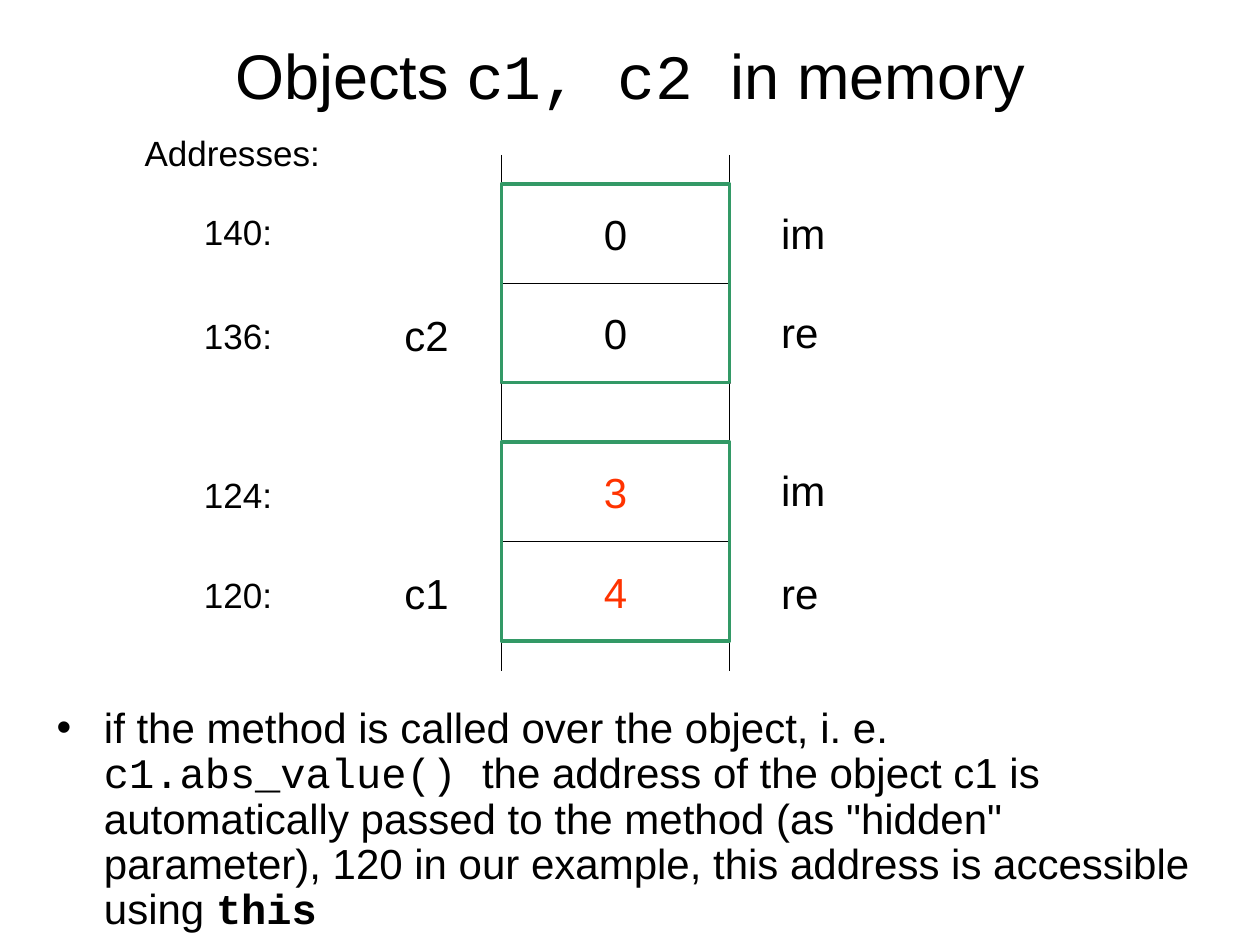
import pptx
import pptx.dml.color
import pptx.enum.shapes
import pptx.enum.text
import pptx.oxml
import pptx.util

Pt = pptx.util.Pt
ALIGN = pptx.enum.text.PP_ALIGN
ANCHOR = pptx.enum.text.MSO_ANCHOR
AUTO_SIZE = pptx.enum.text.MSO_AUTO_SIZE

COLORS = {"text": "000000", "value": "FF3300", "object": "339966"}
SANS, MONO = "Arial", "Courier New"


class MemorySlide:
    def __init__(self, slide):
        self.slide = slide

    def color(self, name):
        return pptx.dml.color.RGBColor.from_string(COLORS[name])

    def style(self, run, size, font=SANS, color="text", bold=False):
        run.font.size = Pt(size)
        run.font.name = font
        run.font.bold = bold
        run.font.color.rgb = self.color(color)

    def placeholder(self, index, box, size, pieces):
        holder = self.slide.placeholders[index]
        holder.left, holder.top, holder.width, holder.height = map(Pt, box)
        holder.text_frame.auto_size = AUTO_SIZE.NONE
        paragraph = holder.text_frame.paragraphs[0]
        for text, font, bold in pieces:
            run = paragraph.add_run()
            run.text = text
            self.style(run, size, font, bold=bold)
        return paragraph

    def label(self, text, left, top, width, height, size, align=ALIGN.CENTER):
        frame = self.slide.shapes.add_textbox(*map(Pt, (left, top, width, height))).text_frame
        frame.word_wrap = True
        frame.auto_size = AUTO_SIZE.SHAPE_TO_FIT_TEXT
        frame.text = text
        frame.paragraphs[0].alignment = align
        self.style(frame.paragraphs[0].runs[0], size)

    def box(self, left, top, width, height, line, weight):
        shape = self.slide.shapes.add_shape(
            pptx.enum.shapes.MSO_SHAPE.RECTANGLE, *map(Pt, (left, top, width, height)))
        shape.shadow.inherit = False
        shape.fill.background()
        shape.line.color.rgb = self.color(line)
        shape.line.width = Pt(weight)
        return shape

    def cell(self, text, left, top, width, height, color):
        frame = self.box(left, top, width, height, "text", 1).text_frame
        frame.word_wrap = False
        frame.vertical_anchor = ANCHOR.MIDDLE
        frame.text = text
        frame.paragraphs[0].alignment = ALIGN.CENTER
        self.style(frame.paragraphs[0].runs[0], 24, color=color)

    def line(self, x, top, bottom):
        connector = self.slide.shapes.add_connector(
            pptx.enum.shapes.MSO_CONNECTOR.STRAIGHT, Pt(x), Pt(top), Pt(x), Pt(bottom))
        connector.line.color.rgb = self.color("text")
        connector.line.width = Pt(0.75)
        connector._element.spPr.append(pptx.oxml.parse_xml(
            '<a:effectLst xmlns:a="http://schemas.openxmlformats.org/drawingml/2006/main"/>'))


def main():
    presentation = pptx.Presentation()
    presentation.slide_width, presentation.slide_height = Pt(720), Pt(540)
    memory = MemorySlide(presentation.slides.add_slide(presentation.slide_layouts[1]))

    title = memory.placeholder(0, (54, 9.5, 612, 65.5), 36, [
        ("Objects ", SANS, False), ("c1, c2 ", MONO, False), ("in memory", SANS, False)])
    title.alignment = ALIGN.CENTER

    explanation = memory.placeholder(1, (25.2, 400.5, 680.4, 130), 24, [
        ("if the method is called over the object, i. e. ", SANS, False),
        ("c1.abs_value() ", MONO, False),
        ('the address of the object c1 is automatically passed to the method (as "hidden" '
         "parameter), 120 in our example, this address is accessible using ", SANS, False),
        ("this", MONO, True)])
    explanation.line_spacing = 0.9

    left, width, cell_height = 286.5, 130.5, 56.75
    objects = [
        ("c2", 105.25, 173.5, "text",
         [("140:", 116.5, "0", "im", 115), ("136:", 176.25, "0", "re", 171.5)]),
        ("c1", 252.75, 321, "value",
         [("124:", 267, "3", "im", 262), ("120:", 324, "4", "re", 321)]),
    ]

    for x in (left, left + width):
        memory.line(x, 88.5, 383.25)

    memory.label("Addresses:", 70.5, 71.5, 124.5, 31.5, 20)
    for name, top, name_top, color, fields in objects:
        for row, (address, address_top, value, field, field_top) in enumerate(fields):
            memory.cell(value, left, top + row * cell_height, width, cell_height, color)
            memory.label(address, 99.25, address_top, 73.5, 31, 20)
            memory.label(field, 439.25, field_top, 51, 36, 24, ALIGN.LEFT)
        memory.box(left, top, width, len(fields) * cell_height, "object", 2)
        memory.label(name, 218.25, name_top, 51, 36, 24)

    presentation.save("out.pptx")


if __name__ == "__main__":
    main()
